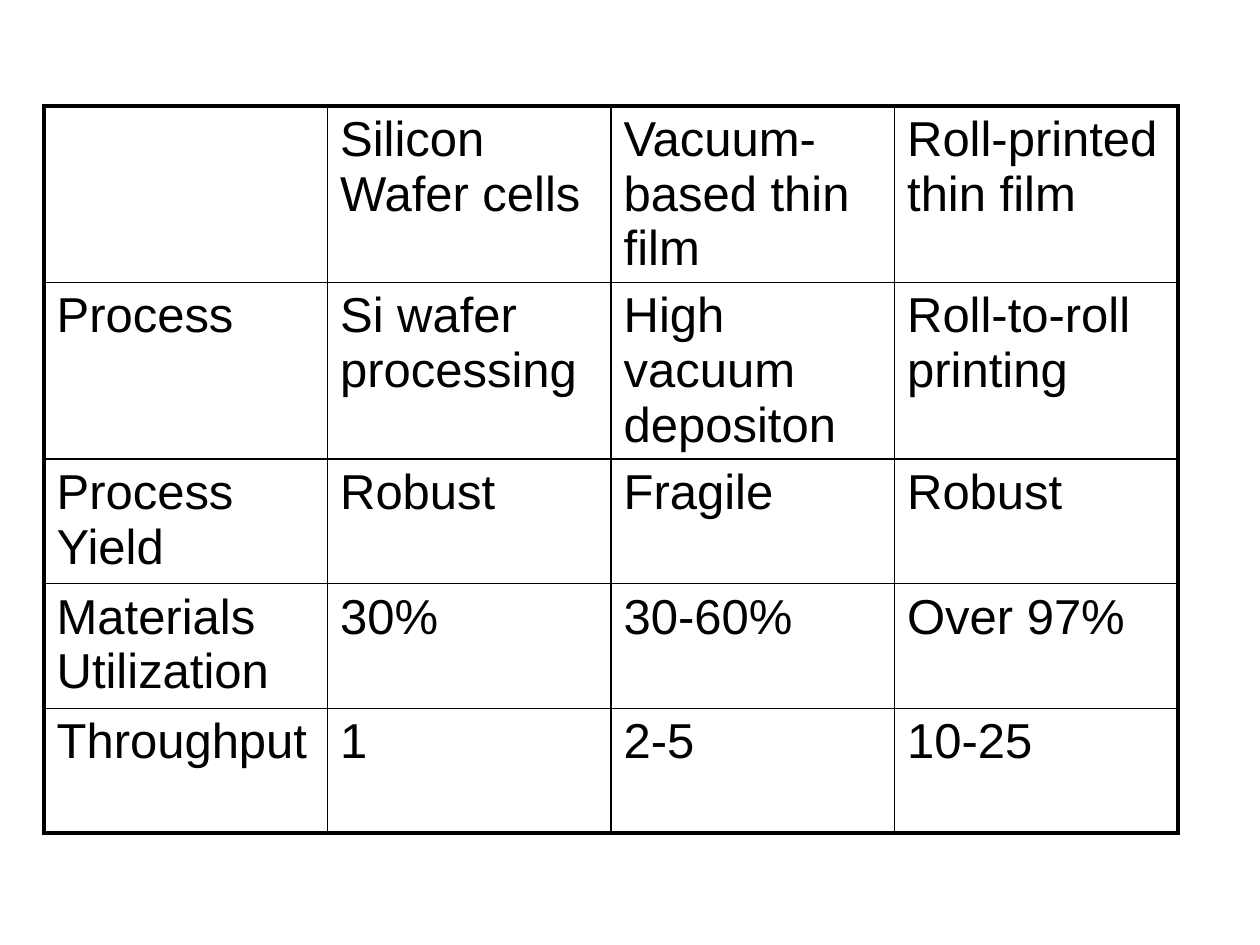
import pptx
import pptx.dml.color
import pptx.oxml
import pptx.oxml.ns
import pptx.util

SLIDE_W, SLIDE_H = 10, 7.5
ROW_HEIGHTS = [1.4, 1.4, 0.99, 0.99, 0.99]
ROWS = [
    ["", "Silicon Wafer cells", "Vacuum-based thin film", "Roll-printed thin film"],
    ["Process", "Si wafer processing", "High vacuum depositon", "Roll-to-roll printing"],
    ["Process Yield", "Robust", "Fragile", "Robust"],
    ["Materials Utilization", "30%", "30-60%", "Over 97%"],
    ["Throughput", "1", "2-5", "10-25"],
]
BLACK = "000000"
INNER, OUTER = 1, 2.25


def color(value):
    return pptx.dml.color.RGBColor.from_string(value)


def set_format(target, values):
    for name, value in values.items():
        setattr(target, name, value)


def set_borders(cell, widths):
    tcPr = cell._tc.get_or_add_tcPr()
    for i, (side, width) in enumerate(widths.items()):
        ln = pptx.oxml.parse_xml(
            f'<a:ln{side} {pptx.oxml.ns.nsdecls("a")} w="{pptx.util.Pt(width)}">'
            f'<a:solidFill><a:srgbClr val="{BLACK}"/></a:solidFill></a:ln{side}>'
        )
        tcPr.insert(i, ln)


def fill_cell(cell, text):
    cell.fill.background()
    p = cell.text_frame.paragraphs[0]
    set_format(p.font, {"name": "Arial", "size": pptx.util.Pt(28)})
    p.font.color.rgb = color(BLACK)
    if text:
        r = p.add_run()
        r.text = text
        set_format(r.font, {"name": "Arial", "size": pptx.util.Pt(28)})
        r.font.color.rgb = color(BLACK)


def add_comparison_table(s, left, top, width, heights):
    n_rows, n_cols = len(ROWS), len(ROWS[0])
    box = [pptx.util.Inches(v) for v in (left, top, width, sum(heights))]
    table = s.shapes.add_table(n_rows, n_cols, *box).table
    set_format(table, {"first_row": False, "horz_banding": False})
    for col in table.columns:
        col.width = pptx.util.Inches(width / n_cols)
    for i, (texts, height) in enumerate(zip(ROWS, heights)):
        table.rows[i].height = pptx.util.Inches(height)
        for j, text in enumerate(texts):
            cell = table.cell(i, j)
            fill_cell(cell, text)
            set_borders(cell, {
                "L": OUTER if j == 0 else INNER,
                "R": OUTER if j == n_cols - 1 else INNER,
                "T": OUTER if i == 0 else INNER,
                "B": OUTER if i == n_rows - 1 else INNER,
            })


def main():
    prs = pptx.Presentation()
    set_format(prs, {
        "slide_width": pptx.util.Inches(SLIDE_W),
        "slide_height": pptx.util.Inches(SLIDE_H),
    })
    s = prs.slides.add_slide(prs.slide_layouts[6])
    add_comparison_table(s, 0.035 * SLIDE_W, 0.112 * SLIDE_H, 0.9 * SLIDE_W, ROW_HEIGHTS)
    prs.save("out.pptx")


if __name__ == "__main__":
    main()
